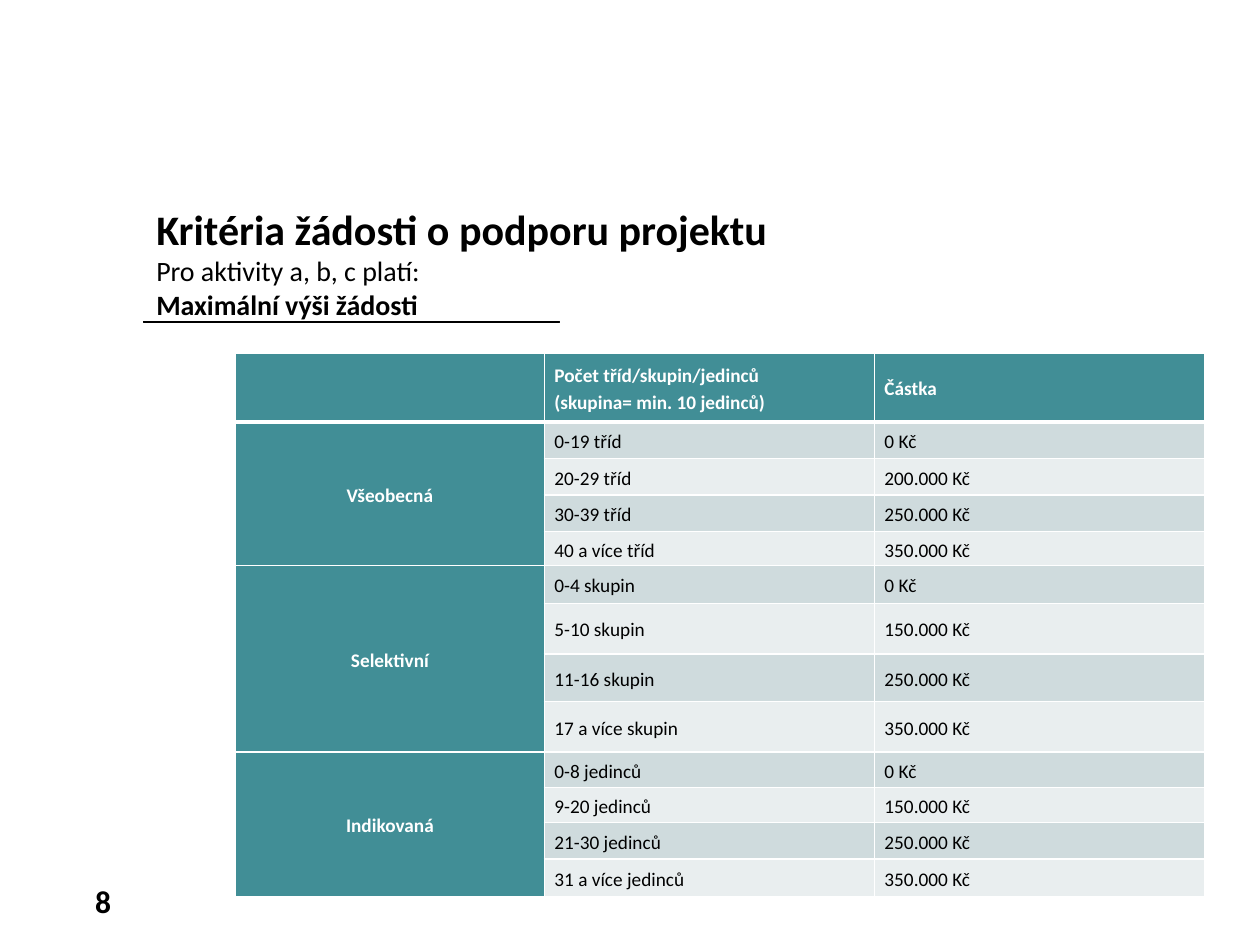
from lxml import etree
from pptx import Presentation
from pptx import util as u
from pptx.dml.color import RGBColor
from pptx.enum import shapes, text
from pptx.oxml import ns

FONT = "Calibri"
BLACK, WHITE, TEAL = "000000", "FFFFFF", "418E96"
BANDS = ("CFDBDD", "E9EEEF")

# Grid: 100 columns by 75 rows on a 10 x 7.5 inch slide
UNIT = u.Inches(0.1)

HEADER = ("", "Počet tříd/skupin/jedinců\n(skupina= min. 10 jedinců)", "Částka")
GROUPS = {
    "Všeobecná": [("0-19 tříd", "0 Kč"), ("20-29 tříd", "200.000 Kč"),
                  ("30-39 tříd", "250.000 Kč"), ("40 a více tříd", "350.000 Kč")],
    "Selektivní": [("0-4 skupin", "0 Kč"), ("5-10 skupin", "150.000 Kč"),
                   ("11-16 skupin", "250.000 Kč"), ("17 a více skupin", "350.000 Kč")],
    "Indikovaná": [("0-8 jedinců", "0 Kč"), ("9-20 jedinců", "150.000 Kč"),
                   ("21-30 jedinců", "250.000 Kč"), ("31 a více jedinců", "350.000 Kč")],
}
COLUMN_WIDTHS = (24.5, 26.2, 26.2)
ROW_HEIGHTS = (5.5, 2.9, 2.9, 2.9, 2.7, 3, 4, 3.8, 4, 2.8, 2.8, 2.9, 3)


def grid(*lengths):
    return [round(n * UNIT) for n in lengths]


def color(code):
    return RGBColor.from_string(code)


def add_run(paragraph, words, size, bold=False, shade=BLACK):
    run = paragraph.add_run()
    run.text = words
    run.font.name, run.font.size, run.font.bold = FONT, u.Pt(size), bold
    run.font.color.rgb = color(shade)


def set_borders(cell, top=1, bottom=1):
    props = cell._tc.get_or_add_tcPr()
    widths = {"lnL": 1, "lnR": 1, "lnT": top, "lnB": bottom}
    for i, (side, width) in enumerate(widths.items()):
        line = etree.Element(ns.qn(f"a:{side}"), w=str(u.Pt(width)))
        fill = etree.SubElement(line, ns.qn("a:solidFill"))
        etree.SubElement(fill, ns.qn("a:srgbClr"), val=WHITE)
        props.insert(i, line)


def fill_cell(cell, words, fill, shade=BLACK, bold=False,
              align=text.PP_ALIGN.JUSTIFY):
    cell.fill.solid()
    cell.fill.fore_color.rgb = color(fill)
    cell.vertical_anchor = text.MSO_ANCHOR.MIDDLE
    cell.margin_left = cell.margin_right = u.Inches(0.08)
    cell.margin_top = cell.margin_bottom = 0
    frame = cell.text_frame
    for i, line in enumerate(words.split("\n")):
        paragraph = frame.add_paragraph() if i else frame.paragraphs[0]
        paragraph.alignment, paragraph.line_spacing = align, 1.15
        if line:
            add_run(paragraph, line, 11, bold, shade)


def place_heading(slide, box):
    title = slide.shapes.title
    title.left, title.top, title.width, title.height = grid(*box)
    frame = title.text_frame
    frame.word_wrap = True
    frame.auto_size = text.MSO_AUTO_SIZE.NONE
    frame.vertical_anchor = text.MSO_ANCHOR.MIDDLE
    lines = (("Kritéria žádosti o podporu projektu", 24, True),
             ("Pro aktivity a, b, c platí:", 16, False),
             ("Maximální výši žádosti", 16, True))
    for i, (words, size, bold) in enumerate(lines):
        paragraph = frame.add_paragraph() if i else frame.paragraphs[0]
        paragraph.alignment = text.PP_ALIGN.LEFT
        add_run(paragraph, words, size, bold)


def place_rule(slide, box):
    rule = slide.shapes.add_shape(shapes.MSO_SHAPE.RECTANGLE, *grid(*box))
    rule.shadow.inherit = False
    rule.fill.solid()
    rule.fill.fore_color.rgb = rule.line.color.rgb = color(BLACK)
    rule.line.width = u.Pt(0.75)


def place_limits(slide, box):
    limits = slide.shapes.add_table(len(ROW_HEIGHTS), len(COLUMN_WIDTHS),
                                    *grid(*box)).table
    for column, width in zip(limits.columns, grid(*COLUMN_WIDTHS)):
        column.width = width
    for row, height in zip(limits.rows, grid(*ROW_HEIGHTS)):
        row.height = height

    # Header row
    for c, words in enumerate(HEADER):
        fill_cell(limits.cell(0, c), words, TEAL, WHITE, True)

    # One merged label per group, with banded tiers beside it
    r = 1
    for group, tiers in GROUPS.items():
        label = limits.cell(r, 0)
        label.merge(limits.cell(r + len(tiers) - 1, 0))
        fill_cell(label, group, TEAL, WHITE, True, text.PP_ALIGN.CENTER)
        for tier in tiers:
            for c, words in enumerate(tier, 1):
                fill_cell(limits.cell(r, c), words, BANDS[(r - 1) % 2])
            r += 1

    # White borders, heavier below the header
    for r in range(len(ROW_HEIGHTS)):
        for c in range(len(COLUMN_WIDTHS)):
            set_borders(limits.cell(r, c), top=3 if r == 1 else 1,
                        bottom=3 if r == 0 else 1)


def place_page_number(slide, box):
    frame = slide.shapes.add_textbox(*grid(*box)).text_frame
    frame.word_wrap = True
    frame.paragraphs[0].alignment = text.PP_ALIGN.RIGHT
    add_run(frame.paragraphs[0], "8", 18, True)


def main():
    deck = Presentation()
    deck.slide_width, deck.slide_height = grid(100, 75)
    slide = deck.slides.add_slide(deck.slide_layouts.get_by_name("Title Only"))
    place_page_number(slide, (2.7, 69.5, 7.1, 4))
    place_limits(slide, (18.7, 28, sum(COLUMN_WIDTHS), sum(ROW_HEIGHTS)))
    place_heading(slide, (11.4, 15.6, 88.6, 10.4))
    place_rule(slide, (11.4, 25.5, 33, 0.1))
    deck.save("out.pptx")


if __name__ == "__main__":
    main()
